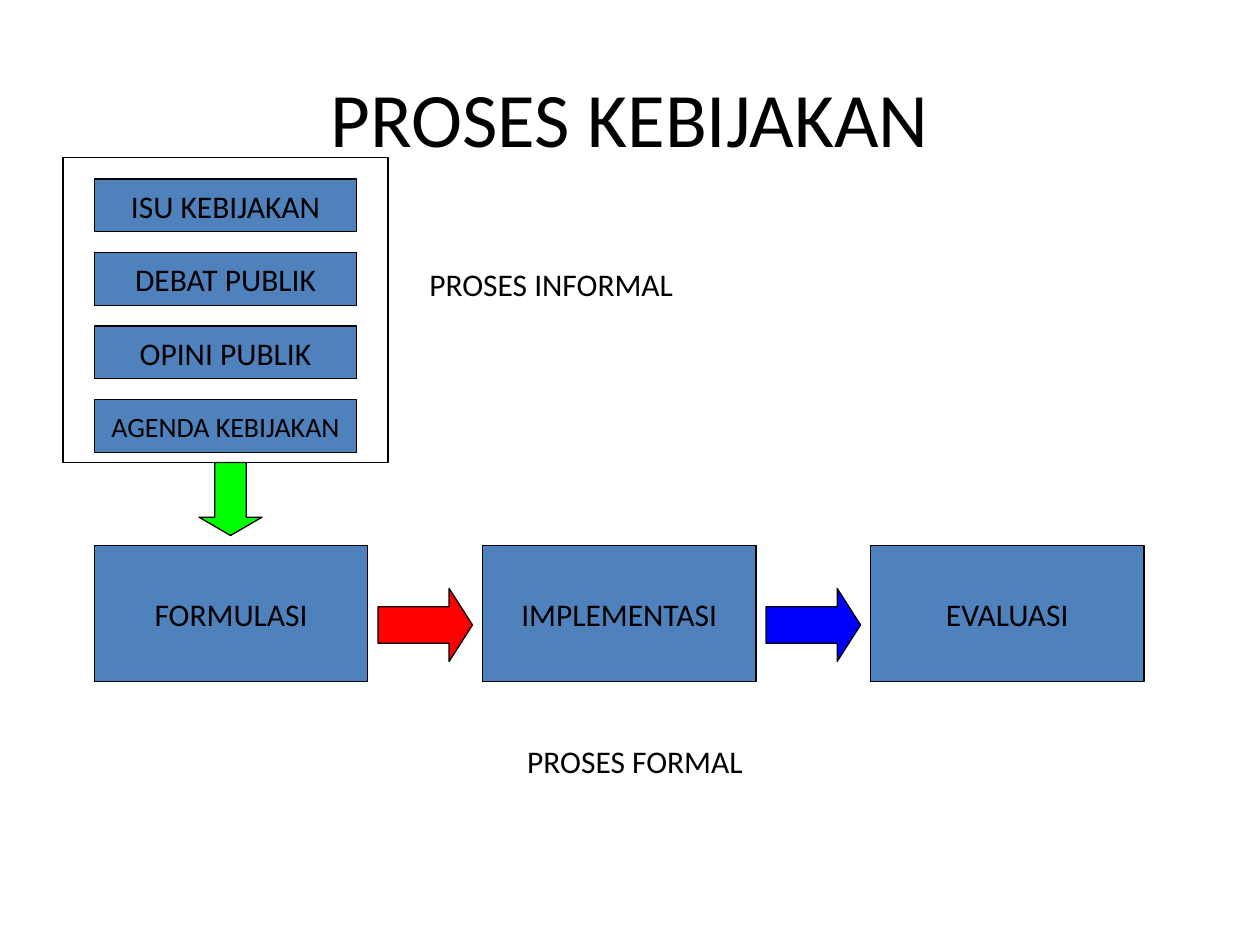
from pptx import Presentation
from pptx import util as u
from pptx.dml.color import RGBColor
from pptx.enum import shapes, text


def color(value):
    return RGBColor.from_string(value)


class SlideBuilder:
    font = "Calibri"
    ink = "000000"
    box_fill = "4F81BD"
    line_width = 0.75

    def __init__(self, slide):
        self.slide = slide

    def add_words(self, shape, words, size, wrap=False):
        frame = shape.text_frame
        frame.word_wrap = wrap
        frame.vertical_anchor = text.MSO_ANCHOR.MIDDLE
        paragraph = frame.paragraphs[0]
        paragraph.alignment = text.PP_ALIGN.CENTER
        run = paragraph.add_run()
        run.text = words
        run.font.name = self.font
        run.font.size = u.Pt(size)
        run.font.color.rgb = color(self.ink)

    def label(self, words, place, size=18, wrap=False):
        shape = self.slide.shapes.add_textbox(*map(u.Inches, place))
        self.add_words(shape, words, size, wrap)

    def outline(self, kind, place, fill=None):
        shape = self.slide.shapes.add_shape(kind, *map(u.Inches, place))
        shape.shadow.inherit = False
        if fill:
            shape.fill.solid()
            shape.fill.fore_color.rgb = color(fill)
        else:
            shape.fill.background()
        shape.line.color.rgb = color(self.ink)
        shape.line.width = u.Pt(self.line_width)
        return shape

    def box(self, words, place, size=18):
        shape = self.outline(shapes.MSO_SHAPE.RECTANGLE, place, self.box_fill)
        self.add_words(shape, words, size)

    def arrow(self, kind, place, fill, head):
        shape = self.outline(kind, place, fill)
        shape.adjustments[0] = 0.5
        shape.adjustments[1] = head


def main():
    presentation = Presentation()
    presentation.slide_width = u.Inches(10)
    presentation.slide_height = u.Inches(7.5)
    builder = SlideBuilder(presentation.slides.add_slide(presentation.slide_layouts[6]))

    # Title
    builder.label("PROSES KEBIJAKAN", (0.5, 0.3, 9, 1.25), 44, wrap=True)

    # Formal process: three stages in a row
    left, stage_step = 0.75, 3.08
    for index, words in enumerate(("FORMULASI", "IMPLEMENTASI", "EVALUASI")):
        builder.box(words, (left + index * stage_step, 4.33, 2.17, 1.08))

    # Informal process: four steps in a column
    steps = (("ISU KEBIJAKAN", 18), ("DEBAT PUBLIK", 18),
             ("OPINI PUBLIK", 18), ("AGENDA KEBIJAKAN", 16))
    for index, (words, size) in enumerate(steps):
        builder.box(words, (left, 1.42 + index * 1.75 / 3, 2.08, 0.42), size)

    # Arrows to and between the stages
    builder.arrow(shapes.MSO_SHAPE.DOWN_ARROW, (1.58, 3.67, 0.5, 0.58), "00FF00", 0.29)
    for index, fill in enumerate(("FF0000", "0000FF")):
        builder.arrow(shapes.MSO_SHAPE.RIGHT_ARROW,
                      (3 + index * stage_step, 4.67, 0.75, 0.58), fill, 0.32)

    # Frame around the informal process
    builder.outline(shapes.MSO_SHAPE.RECTANGLE, (0.5, 1.25, 2.58, 2.42))

    # Process names
    builder.label("PROSES INFORMAL", (3.25, 1.75, 2.25, 1))
    builder.label("PROSES FORMAL", (3.25, 5.75, 3.58, 0.58))

    presentation.save("out.pptx")


if __name__ == "__main__":
    main()
